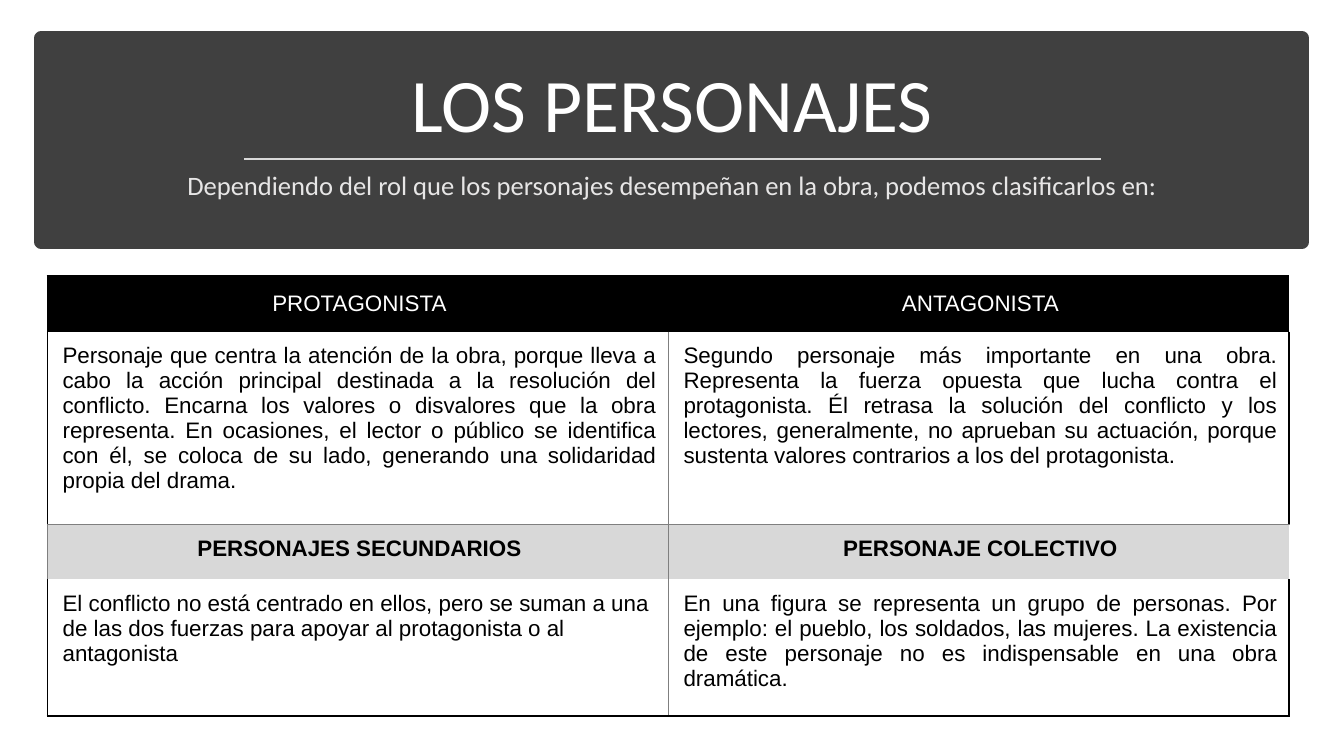
import pptx
import pptx.dml.color
import pptx.enum.shapes
import pptx.enum.text
import pptx.oxml
import pptx.oxml.ns
import pptx.util

ALIGN = pptx.enum.text.PP_ALIGN
ANCHOR = pptx.enum.text.MSO_ANCHOR
INCH = pptx.util.Inches
COLS = 32  # square grid cells across the slide
STROKES = {"K": ("000000", 1.5), "G": ("7F7F7F", 0.75)}

# Each row: height, fill, text colour, bold, strokes, then (text, alignment)
# per cell. Strokes are left, middle, right, top, bottom.
ROWS = [
    (1.32, "000000", "FFFFFF", False, "K--K-", [
        ("PROTAGONISTA", ALIGN.CENTER),
        ("ANTAGONISTA", ALIGN.CENTER)]),
    (4.58, None, "000000", False, "KGK-G", [
        ("Personaje que centra la atención de la obra, porque lleva a cabo "
         "la acción principal destinada a la resolución del conflicto. "
         "Encarna los valores o disvalores que la obra representa. En "
         "ocasiones, el lector o público se identifica con él, se coloca de "
         "su lado, generando una solidaridad propia del drama.",
         ALIGN.JUSTIFY),
        ("Segundo personaje más importante en una obra. Representa la fuerza "
         "opuesta que lucha contra el protagonista. Él retrasa la solución "
         "del conflicto y los lectores, generalmente, no aprueban su "
         "actuación, porque sustenta valores contrarios a los del "
         "protagonista.", ALIGN.JUSTIFY)]),
    (1.32, "D8D8D8", "000000", True, "GG-G-", [
        ("PERSONAJES SECUNDARIOS", ALIGN.CENTER),
        ("PERSONAJE COLECTIVO", ALIGN.CENTER)]),
    (3.26, None, "000000", False, "KGK-K", [
        ("El conflicto no está centrado en ellos, pero se suman a una de las "
         "dos fuerzas para apoyar al protagonista o al antagonista",
         ALIGN.LEFT),
        ("En una figura se representa un grupo de personas. Por ejemplo: el "
         "pueblo, los soldados, las mujeres. La existencia de este personaje "
         "no es indispensable en una obra dramática.", ALIGN.JUSTIFY)]),
]


def rgb(code):
    return pptx.dml.color.RGBColor.from_string(code)


class Deck:
    def __init__(self):
        self.prs = pptx.Presentation()
        self.prs.slide_width = INCH(13.33)
        self.prs.slide_height = INCH(7.5)
        self.unit = self.prs.slide_width / COLS
        self.slide = self.prs.slides.add_slide(self.prs.slide_layouts[6])
        self.shapes = self.slide.shapes

    def grid(self, *cells):
        """Turn grid cells into lengths."""
        return [round(cell * self.unit) for cell in cells]

    def letter(self, frame, text, size, face, color, align, bold=False):
        """Put styled text into a frame."""
        frame.word_wrap = True
        frame.text = text
        para = frame.paragraphs[0]
        para.alignment = align
        font = para.runs[0].font
        font.size = pptx.util.Pt(size)
        font.name = face
        font.bold = bold
        font.color.rgb = rgb(color)

    def panel(self, box, color):
        kind = pptx.enum.shapes.MSO_SHAPE.RECTANGLE
        shape = self.shapes.add_shape(kind, *self.grid(*box))
        shape.shadow.inherit = False
        shape.fill.solid()
        shape.fill.fore_color.rgb = rgb(color)
        shape.line.color.rgb = rgb(color)
        shape.line.width = pptx.util.Pt(10)

    def label(self, box, text, size, color, anchor):
        frame = self.shapes.add_textbox(*self.grid(*box)).text_frame
        frame.vertical_anchor = anchor
        self.letter(frame, text, size, "Calibri", color, ALIGN.CENTER)
        frame.paragraphs[0].line_spacing = 0.9

    def rule(self, ends, color, width):
        kind = pptx.enum.shapes.MSO_CONNECTOR.STRAIGHT
        line = self.shapes.add_connector(kind, *self.grid(*ends))
        line.line.color.rgb = rgb(color)
        line.line.width = pptx.util.Pt(width)
        props = line._element.spPr
        props.append(props.makeelement(pptx.oxml.ns.qn("a:effectLst"), {}))

    def border(self, cell, strokes):
        """Draw the left, right, top and bottom edges of a cell."""
        props = cell._tc.get_or_add_tcPr()
        for index, (side, key) in enumerate(zip("LRTB", strokes)):
            color, width = STROKES.get(key, (None, 0))
            paint = (f'<a:solidFill><a:srgbClr val="{color}"/></a:solidFill>'
                     if color else "<a:noFill/>")
            props.insert(index, pptx.oxml.parse_xml(
                f'<a:ln{side} {pptx.oxml.ns.nsdecls("a")} '
                f'w="{int(pptx.util.Pt(width))}">{paint}</a:ln{side}>'))

    def table(self, box, rows):
        table = self.shapes.add_table(len(rows), 2, *self.grid(*box)).table
        table.first_row = table.horz_banding = False
        for r, (high, fill, color, bold, edges, cells) in enumerate(rows):
            table.rows[r].height = self.grid(high)[0]
            left, mid, right, top, base = edges
            for c, (text, align) in enumerate(cells):
                cell = table.cell(r, c)
                cell.margin_left = INCH(0.15)
                cell.margin_right = INCH(0.12)
                cell.margin_top = cell.margin_bottom = INCH(0.12)
                cell.vertical_anchor = ANCHOR.TOP if r else ANCHOR.MIDDLE
                self.letter(cell.text_frame, text, 16, "Arial", color, align,
                            bold)
                sides = (mid, right) if c else (left, mid)
                self.border(cell, (*sides, top, base))
                if fill:
                    cell.fill.solid()
                    cell.fill.fore_color.rgb = rgb(fill)
                else:
                    cell.fill.background()


def main():
    deck = Deck()
    deck.panel((0.98, 0.91, 30.02, 4.85), "404040")
    deck.label((1.39, 1.22, 29.23, 2.45), "LOS PERSONAJES", 54, "FFFFFF",
               ANCHOR.BOTTOM)
    deck.label((4, 4, 24, 1.1),
               "Dependiendo del rol que los personajes desempeñan en la obra, "
               "podemos clasificarlos en:", 19, "E7E6E6", ANCHOR.TOP)
    deck.rule((5.81, 3.79, 26.21, 3.79), "D9D9D9", 1.75)
    high = sum(row[0] for row in ROWS)
    deck.table((1.13, 6.58, 29.57, high), ROWS)
    deck.prs.save("out.pptx")


if __name__ == "__main__":
    main()
